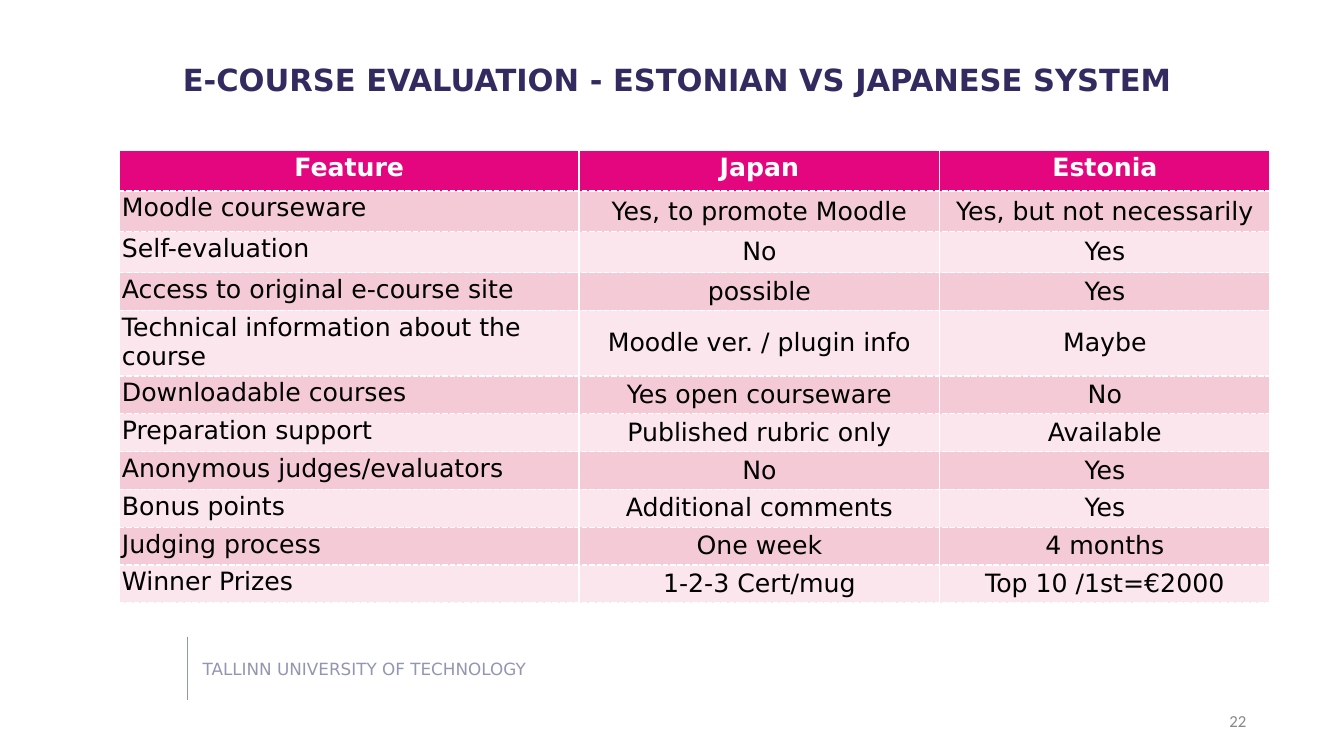
from lxml.etree import SubElement
from pptx import Presentation
from pptx.dml.color import RGBColor
from pptx.enum.shapes import MSO_CONNECTOR
from pptx.enum.text import MSO_ANCHOR, PP_ALIGN
from pptx.oxml.ns import qn
from pptx.util import Pt

PX = 9144
INK = {"title": "332B60", "foot": "9396B0", "page": "888888", "head": "E4067E",
       "odd": "F5CAD7", "even": "FAE6EC", "white": "FFFFFF", "black": "000000"}
SANS = "DejaVu Sans"

TITLE = "E-COURSE EVALUATION - ESTONIAN VS JAPANESE SYSTEM"
SCHOOL = "TALLINN UNIVERSITY OF TECHNOLOGY"
PAGE = "22"
ROWS = [
    ("Feature", "Japan", "Estonia"),
    ("Moodle courseware", "Yes, to promote Moodle", "Yes, but not necessarily"),
    ("Self-evaluation", "No", "Yes"),
    ("Access to original e-course site", "possible", "Yes"),
    ("Technical information about the course", "Moodle ver. / plugin info", "Maybe"),
    ("Downloadable courses", "Yes open courseware", "No"),
    ("Preparation support", "Published rubric only", "Available"),
    ("Anonymous judges/evaluators", "No", "Yes"),
    ("Bonus points", "Additional comments", "Yes"),
    ("Judging process", "One week", "4 months"),
    ("Winner Prizes", "1-2-3 Cert/mug", "Top 10 /1st=€2000"),
]
WIDTHS = [912, 716, 655]
HEIGHTS = [80, 81, 81] + [75] * 8
EDGES = {"a:lnL": "solid", "a:lnR": "solid", "a:lnT": "sysDash", "a:lnB": "sysDash"}


def color(name):
    return RGBColor.from_string(INK[name])


def write(frame, text, size, ink, bold=False, face=SANS, align=PP_ALIGN.LEFT):
    para = frame.paragraphs[0]
    para.alignment = align
    run = para.add_run()
    run.text = text
    font = run.font
    font.name, font.size, font.bold = face, Pt(size), bold
    font.color.rgb = color(ink)


def inset(item, gap):
    item.margin_left = item.margin_right = gap * PX
    item.margin_top = item.margin_bottom = gap * PX


def label(slide, area, text, size, ink, gap=0, wrap=True, **style):
    frame = slide.shapes.add_textbox(*(n * PX for n in area)).text_frame
    frame.word_wrap = wrap
    inset(frame, gap)
    write(frame, text, size, ink, **style)
    return frame


def border(cell):
    props = cell._tc.get_or_add_tcPr()
    for place, (tag, dash) in enumerate(EDGES.items()):
        line = SubElement(props, qn(tag), w=str(Pt(2)))
        fill = SubElement(line, qn("a:solidFill"))
        SubElement(fill, qn("a:srgbClr"), val=INK["white"])
        SubElement(line, qn("a:prstDash"), val=dash)
        props.insert(place, line)


def grid(slide):
    area = (237 * PX, 299 * PX, sum(WIDTHS) * PX, sum(HEIGHTS) * PX)
    table = slide.shapes.add_table(len(ROWS), len(WIDTHS), *area).table
    table.horz_banding = False
    for col, width in zip(table.columns, WIDTHS):
        col.width = width * PX
    for r, texts in enumerate(ROWS):
        table.rows[r].height = HEIGHTS[r] * PX
        head = r == 0
        shade = "head" if head else "odd" if r % 2 else "even"
        for c, text in enumerate(texts):
            cell = table.cell(r, c)
            inset(cell, 5)
            cell.vertical_anchor = MSO_ANCHOR.MIDDLE if r and c else MSO_ANCHOR.TOP
            cell.fill.solid()
            cell.fill.fore_color.rgb = color(shade)
            border(cell)
            align = PP_ALIGN.CENTER if head or c else PP_ALIGN.LEFT
            write(cell.text_frame, text, 36, "white" if head else "black", head, align=align)


def rule(slide, x, top, end):
    line = slide.shapes.add_connector(MSO_CONNECTOR.STRAIGHT, x * PX, top * PX, x * PX, end * PX)
    line.line.color.rgb = color("foot")
    line.line.width = Pt(1)
    SubElement(line._element.spPr, qn("a:effectLst"))


def main():
    deck = Presentation()
    deck.slide_width, deck.slide_height = 2667 * PX, 1500 * PX
    slide = deck.slides.add_slide(deck.slide_layouts[6])
    rule(slide, 372, 1263, 1388)
    label(slide, (402, 1306, 726, 40), SCHOOL, 24, "foot")
    label(slide, (363, 121, 2030, 126), TITLE, 43.6, "title", bold=True)
    grid(slide)
    page = label(slide, (2428, 1404, 55, 53), PAGE, 24, "page", gap=10, wrap=False,
                 face="Calibri", align=PP_ALIGN.RIGHT)
    page.vertical_anchor = MSO_ANCHOR.MIDDLE
    deck.save("out.pptx")


if __name__ == "__main__":
    main()
